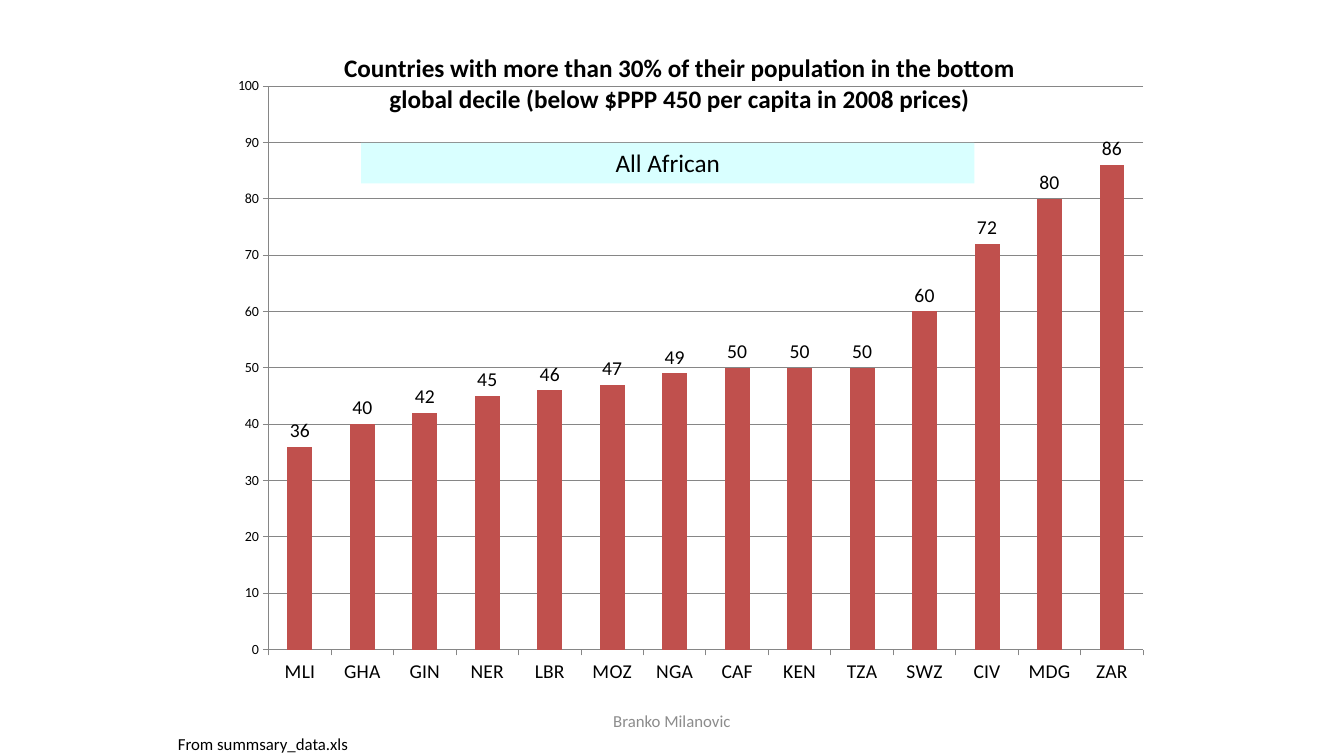
from lxml.etree import SubElement
from pptx import Presentation
from pptx.chart.data import CategoryChartData
from pptx.dml.color import RGBColor
from pptx.enum.chart import XL_CHART_TYPE, XL_LABEL_POSITION, XL_TICK_MARK
from pptx.enum.shapes import MSO_SHAPE
from pptx.enum.text import MSO_ANCHOR, PP_ALIGN
from pptx.oxml.ns import qn
from pptx.util import Pt

FONT = "Calibri"
BLACK, GRAY, AXIS_GRAY = "000000", "8C8C8C", "868686"
BAR_RED, PALE_CYAN = "C0504D", "D9FFFF"
TITLE = ("Countries with more than 30% of their population in the bottom "
         "global decile (below $PPP 450 per capita in 2008 prices)")
POPULATION_SHARES = {
    "MLI": 36, "GHA": 40, "GIN": 42, "NER": 45, "LBR": 46, "MOZ": 47, "NGA": 49,
    "CAF": 50, "KEN": 50, "TZA": 50, "SWZ": 60, "CIV": 72, "MDG": 80, "ZAR": 86,
}


def rgb(color):
    return RGBColor.from_string(color)


def style_font(font, size, color=BLACK, bold=False):
    font.name = FONT
    font.size = Pt(size)
    font.bold = bold
    font.color.rgb = rgb(color)


def write(shape, text, size, color=BLACK, align=PP_ALIGN.LEFT, anchor=MSO_ANCHOR.TOP):
    frame = shape.text_frame
    frame.word_wrap = True
    frame.vertical_anchor = anchor
    paragraph = frame.paragraphs[0]
    paragraph.alignment = align
    run = paragraph.add_run()
    run.text = text
    style_font(run.font, size, color)


def add_label(slide, box, text, size, **style):
    label = slide.shapes.add_textbox(*map(Pt, box))
    write(label, text, size, **style)


def add_banner(slide, box, text, size, fill):
    banner = slide.shapes.add_shape(MSO_SHAPE.RECTANGLE, *map(Pt, box))
    banner.shadow.inherit = False
    banner.fill.solid()
    banner.fill.fore_color.rgb = rgb(fill)
    banner.line.fill.background()
    write(banner, text, size, align=PP_ALIGN.CENTER)


def set_layout(part, position, **settings):
    """Place a chart part by fractions; position is the layout's index in it."""
    layout = part.find(qn("c:layout"))
    if layout is None:
        layout = SubElement(part, qn("c:layout"))
        part.insert(position, layout)
    manual = SubElement(layout, qn("c:manualLayout"))
    for name, value in settings.items():
        SubElement(manual, qn(f"c:{name}")).set("val", str(value))


def style_axis(axis, size):
    style_font(axis.tick_labels.font, size)
    axis.major_tick_mark = XL_TICK_MARK.OUTSIDE
    axis.minor_tick_mark = XL_TICK_MARK.NONE
    axis.format.line.color.rgb = rgb(AXIS_GRAY)
    axis.format.line.width = Pt(0.75)


def add_title(chart, text):
    run = chart.chart_title.text_frame.paragraphs[0].add_run()
    run.text = text
    style_font(run.font, 18, bold=True)
    title = chart._chartSpace.chart.find(qn("c:title"))
    set_layout(title, 1, xMode="edge", yMode="edge", x=0.13, y=0.03)


def add_share_chart(slide, box, shares):
    data = CategoryChartData()
    data.categories = list(shares)
    data.add_series("Series 1", list(shares.values()))
    chart = slide.shapes.add_chart(
        XL_CHART_TYPE.COLUMN_CLUSTERED, *map(Pt, box), data).chart
    style_font(chart.font, 10)
    chart.has_legend = False
    add_title(chart, TITLE)

    style_axis(chart.category_axis, 14)
    style_axis(chart.value_axis, 10)
    chart.value_axis.minimum_scale = 0
    chart.value_axis.maximum_scale = 100
    chart.value_axis.major_unit = 10
    gridlines = chart.value_axis.major_gridlines.format.line
    gridlines.color.rgb = rgb(AXIS_GRAY)
    gridlines.width = Pt(0.75)

    plot = chart.plots[0]
    plot.gap_width = 150
    plot.vary_by_categories = False
    bars = plot.series[0].format.fill
    bars.solid()
    bars.fore_color.rgb = rgb(BAR_RED)
    plot.has_data_labels = True
    labels = plot.data_labels
    labels.show_value = True
    labels.position = XL_LABEL_POSITION.OUTSIDE_END
    style_font(labels.font, 14)

    set_layout(chart._chartSpace.chart.plotArea, 0, layoutTarget="inner",
               xMode="edge", yMode="edge", x=0.054, y=0.087, w=0.938, h=0.805)


def main():
    deck = Presentation()
    deck.slide_width, deck.slide_height = Pt(960), Pt(540)
    slide = deck.slides.add_slide(deck.slide_layouts[6])
    add_label(slide, (328, 500.4, 304, 28.8), "Branko Milanovic", 12, color=GRAY,
              align=PP_ALIGN.CENTER, anchor=MSO_ANCHOR.MIDDLE)
    add_share_chart(slide, (156, 18, 666, 500), POPULATION_SHARES)
    add_label(slide, (120, 520.5, 180, 21.6), "From summsary_data.xls", 12)
    add_banner(slide, (258, 102, 438, 29), "All African", 18, PALE_CYAN)
    deck.save("out.pptx")


if __name__ == "__main__":
    main()
